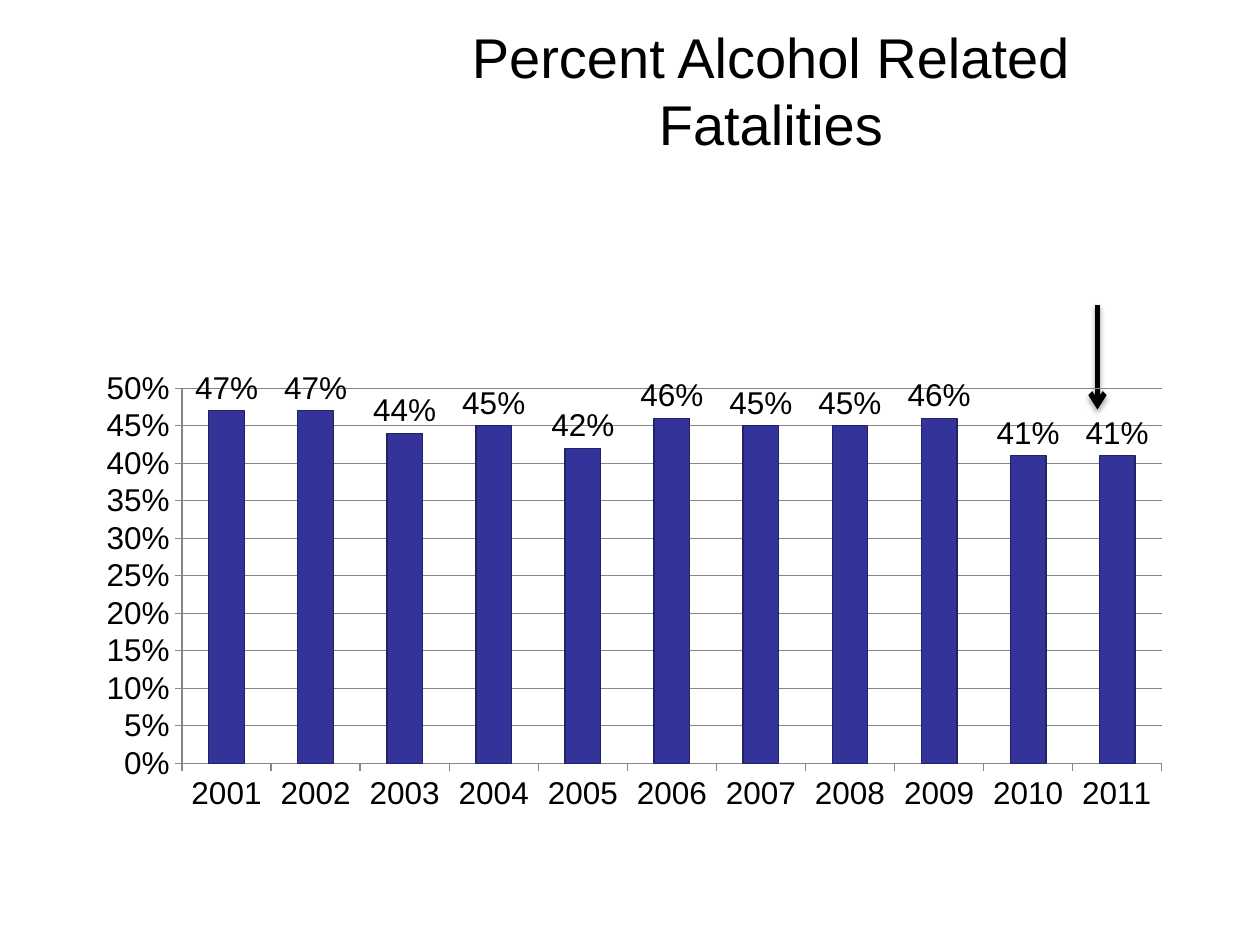
"""Build a slide charting the yearly percentage of alcohol related fatalities."""
from dataclasses import dataclass
from typing import Any

from lxml import etree
from pptx import Presentation
from pptx import util as u
from pptx.chart.data import CategoryChartData
from pptx.dml.color import RGBColor
from pptx.enum import chart as ch, shapes, text
from pptx.oxml import parse_xml
from pptx.oxml.ns import nsdecls, qn


@dataclass(frozen=True)
class Theme:
    font: str = "Arial"
    ink: RGBColor = RGBColor(0, 0, 0)
    bar: RGBColor = RGBColor(0x33, 0x33, 0x99)
    bar_edge: RGBColor = RGBColor(0x22, 0x22, 0x66)
    grid: RGBColor = RGBColor(0x86, 0x86, 0x86)
    title: u.Pt = u.Pt(32)
    label: u.Pt = u.Pt(18)


@dataclass(frozen=True)
class Box:
    x: float
    y: float
    w: float
    h: float

    def emu(self) -> list[u.Inches]:
        return [u.Inches(v) for v in (self.x, self.y, self.w, self.h)]


THEME = Theme()
FIRST_YEAR = 2001
RATES = (0.47, 0.47, 0.44, 0.45, 0.42, 0.46, 0.45, 0.45, 0.46, 0.41, 0.41)
PLOT = {"x": 0.105, "y": 0.187, "w": 0.864, "h": 0.669}


def apply(target: Any, **values: Any) -> None:
    for name, value in values.items():
        setattr(target, name, value)


def style_font(font: Any, size: u.Pt) -> None:
    apply(font, name=THEME.font, size=size, bold=False)
    font.color.rgb = THEME.ink


def style_line(line: Any, color: RGBColor, width: float) -> None:
    line.color.rgb = color
    line.width = u.Pt(width)


def add_title(s: Any, box: Box, words: str) -> None:
    tf = s.shapes.add_textbox(*box.emu()).text_frame
    apply(tf, word_wrap=True, vertical_anchor=text.MSO_ANCHOR.MIDDLE)
    p = tf.paragraphs[0]
    p.alignment = text.PP_ALIGN.CENTER
    r = p.add_run()
    r.text = words
    style_font(r.font, THEME.title)


def add_arrow(s: Any, x: float, top: float, bottom: float) -> None:
    ends = [u.Inches(v) for v in (x, top, x, bottom)]
    cx = s.shapes.add_connector(shapes.MSO_CONNECTOR.STRAIGHT, *ends)
    style_line(cx.line, THEME.ink, 3)
    etree.SubElement(cx.line._get_or_add_ln(), qn("a:tailEnd"), type="arrow")
    cx._element.spPr.append(parse_xml(
        f'<a:effectLst {nsdecls("a")}>'
        f'<a:outerShdw blurRad="{u.Pt(3.1)}" dist="{u.Pt(1.8)}" dir="5400000" rotWithShape="0">'
        '<a:srgbClr val="000000"><a:alpha val="35000"/></a:srgbClr>'
        '</a:outerShdw></a:effectLst>'))


def set_inner_plot(chart: Any, plot: dict[str, float]) -> None:
    area = chart._chartSpace.chart.plotArea
    for old in area.findall(qn("c:layout")):
        area.remove(old)
    layout = etree.Element(qn("c:layout"))
    manual = etree.SubElement(layout, qn("c:manualLayout"))
    values = {"layoutTarget": "inner", "xMode": "edge", "yMode": "edge", **plot}
    for name, value in values.items():
        etree.SubElement(manual, qn(f"c:{name}"), val=str(value))
    area.insert(0, layout)


def add_rate_chart(s: Any, box: Box) -> None:
    data = CategoryChartData(number_format="0%")
    data.categories = [str(FIRST_YEAR + i) for i in range(len(RATES))]
    data.add_series("Series 1", RATES)
    chart = s.shapes.add_chart(ch.XL_CHART_TYPE.COLUMN_CLUSTERED, *box.emu(), data).chart
    apply(chart, has_legend=False, has_title=False)
    style_font(chart.font, THEME.label)
    set_inner_plot(chart, PLOT)

    for axis in (chart.category_axis, chart.value_axis):
        apply(axis, major_tick_mark=ch.XL_TICK_MARK.OUTSIDE,
              minor_tick_mark=ch.XL_TICK_MARK.NONE)
        style_line(axis.format.line, THEME.grid, 0.75)
    axis = chart.value_axis
    apply(axis, minimum_scale=0, maximum_scale=0.5, major_unit=0.05, has_major_gridlines=True)
    style_line(axis.major_gridlines.format.line, THEME.grid, 0.75)
    apply(axis.tick_labels, number_format="0%", number_format_is_linked=False)

    plot = chart.plots[0]
    apply(plot, gap_width=150, vary_by_categories=False, has_data_labels=True)
    labels = plot.data_labels
    apply(labels, show_value=True, number_format="0%", number_format_is_linked=False,
          position=ch.XL_LABEL_POSITION.OUTSIDE_END)
    style_font(labels.font, THEME.label)
    bars = plot.series[0]
    bars.invert_if_negative = False
    bars.format.fill.solid()
    bars.format.fill.fore_color.rgb = THEME.bar
    style_line(bars.format.line, THEME.bar_edge, 0.75)


def main() -> None:
    prs = Presentation()
    apply(prs, slide_width=u.Inches(10), slide_height=u.Inches(7.5))
    s = prs.slides.add_slide(prs.slide_layouts[6])
    add_title(s, Box(2.83, 0.25, 6.58, 0.92), "Percent Alcohol Related Fatalities")
    add_arrow(s, 8.71, 2.42, 3.25)
    add_rate_chart(s, Box(0.5, 2.25, 9, 4.45))
    prs.save("out.pptx")


if __name__ == "__main__":
    main()
